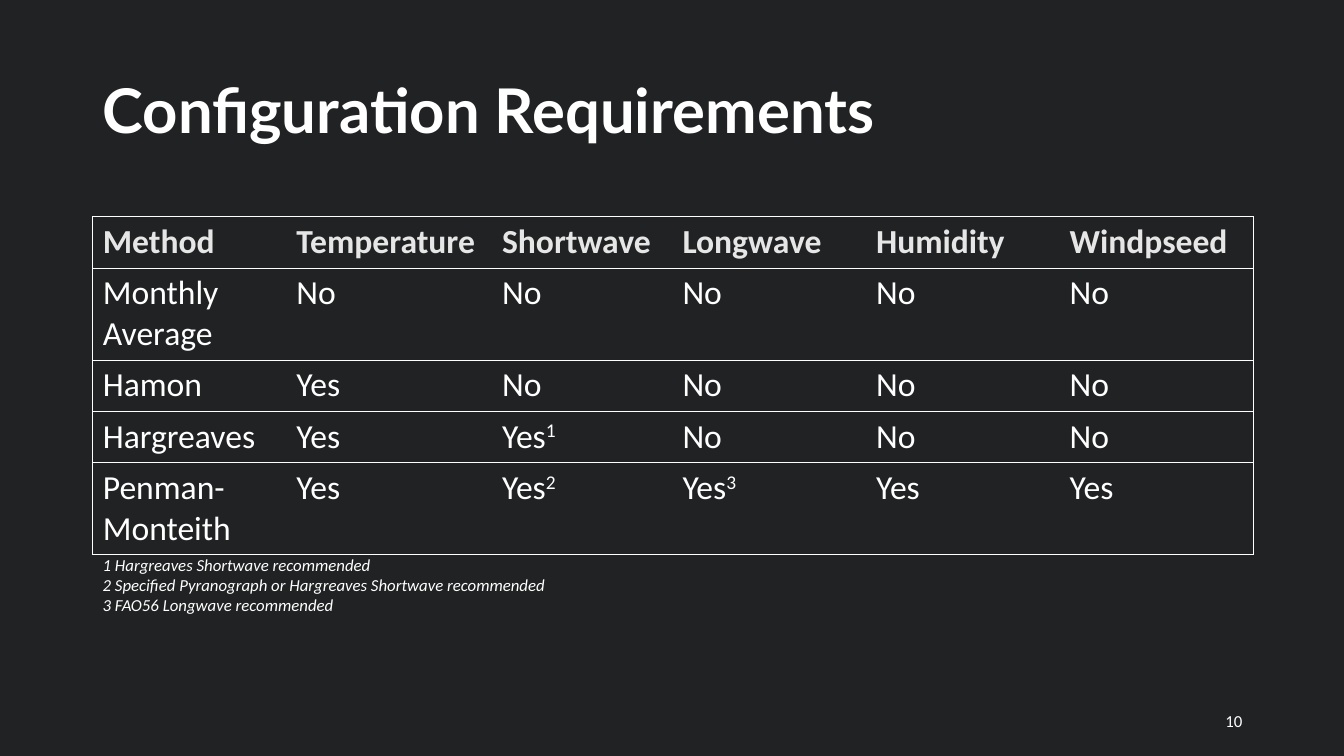
from dataclasses import dataclass

import pptx
import pptx.dml.color
import pptx.enum.text
import pptx.oxml
import pptx.oxml.ns
import pptx.util
from pptx.util import Inches

RGBColor = pptx.dml.color.RGBColor
Anchor = pptx.enum.text.MSO_ANCHOR
Align = pptx.enum.text.PP_ALIGN

BACKGROUND = RGBColor(0x20, 0x22, 0x23)
WHITE = RGBColor(0xFF, 0xFF, 0xFF)
HEADER_GRAY = RGBColor(0xE7, 0xE6, 0xE6)

LEFT = 0.92
CONTENT_WIDTH = 11.5
TABLE_TOP = 2.15
BORDER_WIDTH = 0.5
COLUMN_WIDTHS = [1.92, 2.04, 1.79, 1.92, 1.92, 1.92]
SINGLE_LINE, DOUBLE_LINE = 0.5, 0.91
HEADERS = ["Method", "Temperature", "Shortwave", "Longwave", "Humidity", "Windpseed"]


@dataclass
class Method:
    name: str
    needs: list[str]  # a caret precedes a footnote number
    height: float = SINGLE_LINE


@dataclass
class TextBox:
    left: float
    top: float
    width: float
    height: float
    lines: list[str]
    size: float
    font: str = "Calibri"
    bold: bool = False
    italic: bool = False
    align: Align = Align.LEFT
    anchor: Anchor = Anchor.TOP
    line_spacing: float = 1.0


METHODS = [
    Method("Monthly Average", ["No"] * 5, DOUBLE_LINE),
    Method("Hamon", ["Yes"] + ["No"] * 4),
    Method("Hargreaves", ["Yes", "Yes^1", "No", "No", "No"]),
    Method("Penman-Monteith", ["Yes", "Yes^2", "Yes^3", "Yes", "Yes"], DOUBLE_LINE),
]
FOOTNOTES = [
    "1 Hargreaves Shortwave recommended",
    "2 Specified Pyranograph or Hargreaves Shortwave recommended",
    "3 FAO56 Longwave recommended",
]
TEXT_BOXES = [
    TextBox(9.42, 6.95, 3, 0.4, ["10"], 12, align=Align.RIGHT, anchor=Anchor.MIDDLE),
    TextBox(LEFT, 0.4, CONTENT_WIDTH, 1.45, ["Configuration Requirements"], 44,
            font="Lato", bold=True, anchor=Anchor.MIDDLE, line_spacing=0.9),
    TextBox(LEFT, 5.45, 5.67, 0.91, FOOTNOTES, 12, italic=True),
]


def write_text(paragraph, text: str, *, size: float, font: str = "Calibri",
               color: RGBColor = WHITE, bold: bool = False, italic: bool = False) -> None:
    """Add text to a paragraph; whatever follows a caret is superscript."""
    base, _, superscript = text.partition("^")
    for part, offset in ((base, "0"), (superscript, "30000")):
        if not part:
            continue
        run = paragraph.add_run()
        run.text = part
        run.font.size = pptx.util.Pt(size)
        run.font.name = font
        run.font.color.rgb = color
        run.font.bold = bold
        run.font.italic = italic
        run.font._element.set("baseline", offset)


def add_text_box(slide, box: TextBox) -> None:
    shape = slide.shapes.add_textbox(
        Inches(box.left), Inches(box.top), Inches(box.width), Inches(box.height))
    frame = shape.text_frame
    frame.word_wrap = True
    frame.vertical_anchor = box.anchor
    for index, line in enumerate(box.lines):
        paragraph = frame.add_paragraph() if index else frame.paragraphs[0]
        paragraph.alignment = box.align
        paragraph.line_spacing = box.line_spacing
        write_text(paragraph, line, size=box.size, font=box.font,
                   bold=box.bold, italic=box.italic)


def set_borders(cell, visible_sides: str) -> None:
    """Draw the sides named by L, R, T and B, and clear the others."""
    properties = cell._tc.get_or_add_tcPr()
    for index, side in enumerate("LRTB"):
        fill = (f'<a:solidFill><a:srgbClr val="{WHITE}"/></a:solidFill>'
                if side in visible_sides else "<a:noFill/>")
        line = pptx.oxml.parse_xml(
            f'<a:ln{side} {pptx.oxml.ns.nsdecls("a")} '
            f'w="{pptx.util.Pt(BORDER_WIDTH)}">{fill}</a:ln{side}>')
        properties.insert(index, line)


def add_requirements_table(slide) -> None:
    rows = [HEADERS] + [[method.name, *method.needs] for method in METHODS]
    heights = [SINGLE_LINE] + [method.height for method in METHODS]
    table = slide.shapes.add_table(
        len(rows), len(HEADERS), Inches(LEFT), Inches(TABLE_TOP),
        Inches(CONTENT_WIDTH), Inches(sum(heights))).table
    table.first_row = False
    table.horz_banding = False
    for column, width in zip(table.columns, COLUMN_WIDTHS):
        column.width = Inches(width)
    for row_index, (texts, height) in enumerate(zip(rows, heights)):
        table.rows[row_index].height = Inches(height)
        is_header = row_index == 0
        for column_index, text in enumerate(texts):
            cell = table.cell(row_index, column_index)
            cell.fill.background()
            sides = "TB"
            if column_index == 0:
                sides += "L"
            if column_index == len(HEADERS) - 1:
                sides += "R"
            set_borders(cell, sides)
            write_text(cell.text_frame.paragraphs[0], text, size=24, bold=is_header,
                       color=HEADER_GRAY if is_header else WHITE)


def main() -> None:
    presentation = pptx.Presentation()
    presentation.slide_width = Inches(13.33)
    presentation.slide_height = Inches(7.5)
    slide = presentation.slides.add_slide(presentation.slide_layouts[6])
    slide.background.fill.solid()
    slide.background.fill.fore_color.rgb = BACKGROUND
    add_requirements_table(slide)
    for box in TEXT_BOXES:
        add_text_box(slide, box)
    presentation.save("out.pptx")


if __name__ == "__main__":
    main()
